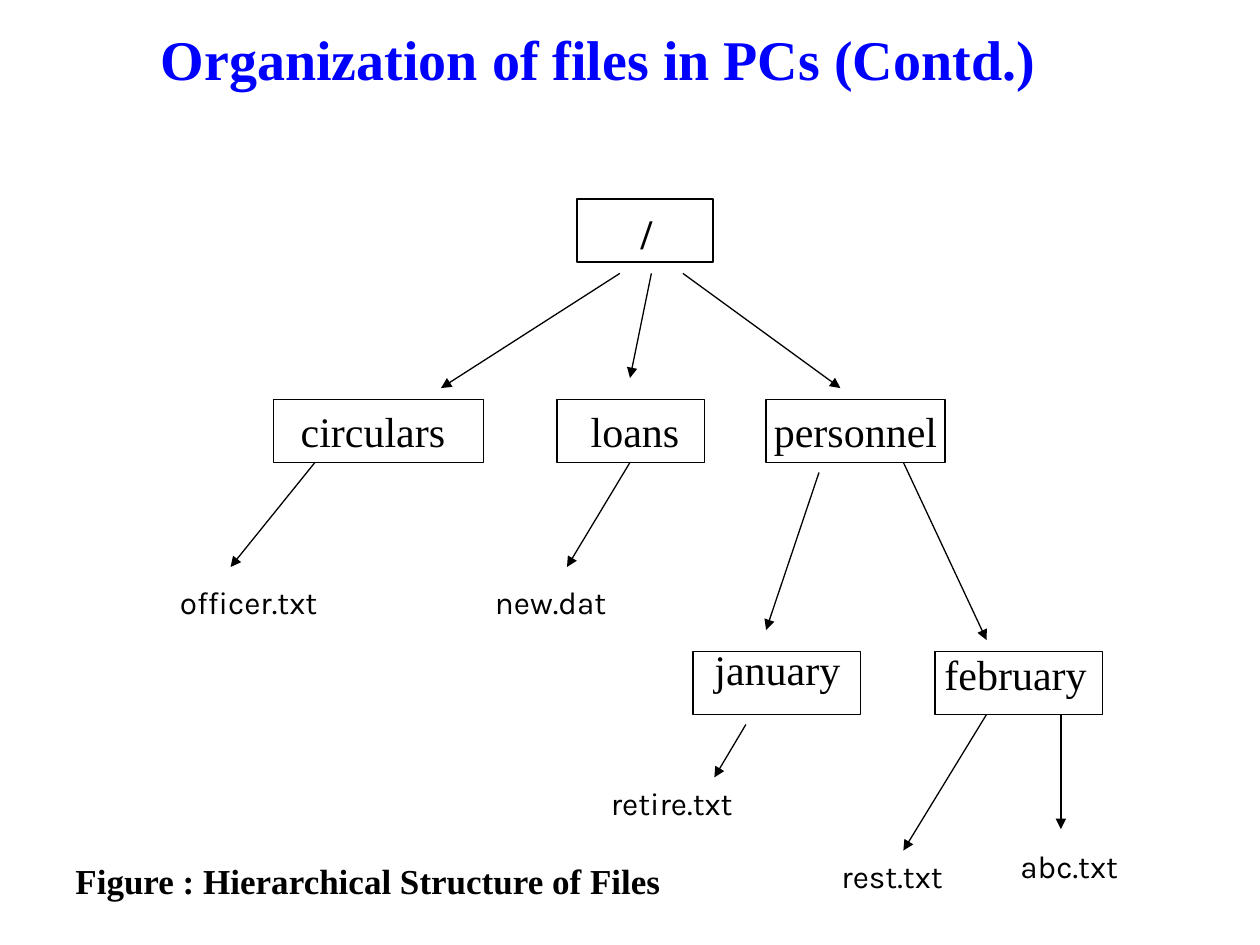
import pptx
import pptx.util
import pptx.dml.color
import pptx.enum.shapes
import pptx.enum.text
import pptx.oxml.ns
import lxml.etree

Inches = pptx.util.Inches
ALIGN = pptx.enum.text.PP_ALIGN
ANCHOR = pptx.enum.text.MSO_ANCHOR
SERIF, SANS = "Times New Roman", "Karla"
BLACK, BLUE = "000000", "0000FF"

# Content: lengths in inches
TITLE = "Organization of files in PCs (Contd.)"
CAPTION = "Figure : Hierarchical Structure of Files"
BOX_HEIGHT = 0.5

# name, box left, box top, box width, label left, label top, label width, bold
DIRECTORIES = [
    ("/", 4.58, 1.58, 1.08, 4.67, 1.6, 0.92, True),
    ("circulars", 2.17, 3.17, 1.67, 2.25, 3.17, 1.42, False),
    ("loans", 4.42, 3.17, 1.17, 4.33, 3.17, 1.42, False),
    ("personnel", 6.08, 3.17, 1.42, 6.04, 3.17, 1.5, False),
    ("january", 5.5, 5.17, 1.33, 5.46, 5.06, 1.42, False),
    ("february", 7.42, 5.17, 1.33, 7.35, 5.1, 1.42, False),
]
# name, left, top
FILES = [
    ("officer.txt", 1.33, 4.58),
    ("new.dat", 3.83, 4.58),
    ("retire.txt", 4.75, 6.17),
    ("rest.txt", 6.58, 6.75),
    ("abc.txt", 8, 6.67),
]
# start x, start y, end x, end y
ARROWS = [
    (4.92, 2.17, 3.5, 3.08),    # / to circulars
    (5.17, 2.17, 5, 3),         # / to loans
    (5.42, 2.17, 6.67, 3.08),   # / to personnel
    (2.5, 3.67, 1.83, 4.5),     # circulars to officer.txt
    (5, 3.67, 4.5, 4.5),        # loans to new.dat
    (6.5, 3.75, 6.08, 5),       # personnel to january
    (7.17, 3.67, 7.83, 5.08),   # personnel to february
    (5.92, 5.75, 5.67, 6.17),   # january to retire.txt
    (7.83, 5.67, 7.17, 6.75),   # february to rest.txt
    (8.42, 5.67, 8.42, 6.58),   # february to abc.txt
]


def color(value):
    return pptx.dml.color.RGBColor.from_string(value)


def add_child(parent, tag, **attributes):
    return lxml.etree.SubElement(parent, pptx.oxml.ns.qn(tag), **attributes)


def add_text(slide, text, left, top, width, height, size, font=SERIF,
             bold=False, align=ALIGN.LEFT, fill=BLACK):
    box = slide.shapes.add_textbox(*map(Inches, (left, top, width, height)))
    frame = box.text_frame
    frame.text = text
    frame.word_wrap = True
    paragraph = frame.paragraphs[0]
    paragraph.alignment = align
    run_font = paragraph.runs[0].font
    run_font.name = font
    run_font.size = pptx.util.Pt(size)
    run_font.bold = bold
    run_font.color.rgb = color(fill)
    return frame


def add_label(slide, *position, **style):
    frame = add_text(slide, *position, **style)
    frame.auto_size = pptx.enum.text.MSO_AUTO_SIZE.SHAPE_TO_FIT_TEXT
    # Space before: half a line
    properties = frame.paragraphs[0]._p.get_or_add_pPr()
    add_child(add_child(properties, "a:spcBef"), "a:spcPct", val="50000")


def add_box(slide, left, top, width):
    shape = slide.shapes.add_shape(
        pptx.enum.shapes.MSO_SHAPE.RECTANGLE,
        *map(Inches, (left, top, width, BOX_HEIGHT)))
    shape.shadow.inherit = False
    shape.fill.background()
    shape.line.color.rgb = color(BLACK)
    shape.line.width = pptx.util.Pt(0.75)


def add_arrow(slide, *ends):
    arrow = slide.shapes.add_connector(
        pptx.enum.shapes.MSO_CONNECTOR.STRAIGHT, *map(Inches, ends))
    arrow.line.color.rgb = color(BLACK)
    arrow.line.width = pptx.util.Pt(0.75)
    add_child(arrow.line._get_or_add_ln(), "a:tailEnd", type="triangle")
    add_child(arrow._element.spPr, "a:effectLst")


def main():
    presentation = pptx.Presentation()
    presentation.slide_width = Inches(10)
    presentation.slide_height = Inches(7.5)
    slide = presentation.slides.add_slide(presentation.slide_layouts[6])

    # Title
    title = add_text(slide, TITLE, 0.25, 0, 9, 0.92, 32, bold=True,
                     align=ALIGN.CENTER, fill=BLUE)
    title.vertical_anchor = ANCHOR.MIDDLE

    # Directory tree
    for name, left, top, width, text_left, text_top, text_width, bold in DIRECTORIES:
        add_box(slide, left, top, width)
        add_label(slide, name, text_left, text_top, text_width, BOX_HEIGHT, 24,
                  bold=bold, align=ALIGN.CENTER)
    for ends in ARROWS:
        add_arrow(slide, *ends)
    for name, left, top in FILES:
        add_label(slide, name, left, top, 1.5, 0.4, 18, font=SANS)

    # Caption
    add_label(slide, CAPTION, 0.5, 6.77, 5.25, 0.44, 20, bold=True)

    presentation.save("out.pptx")


if __name__ == "__main__":
    main()
